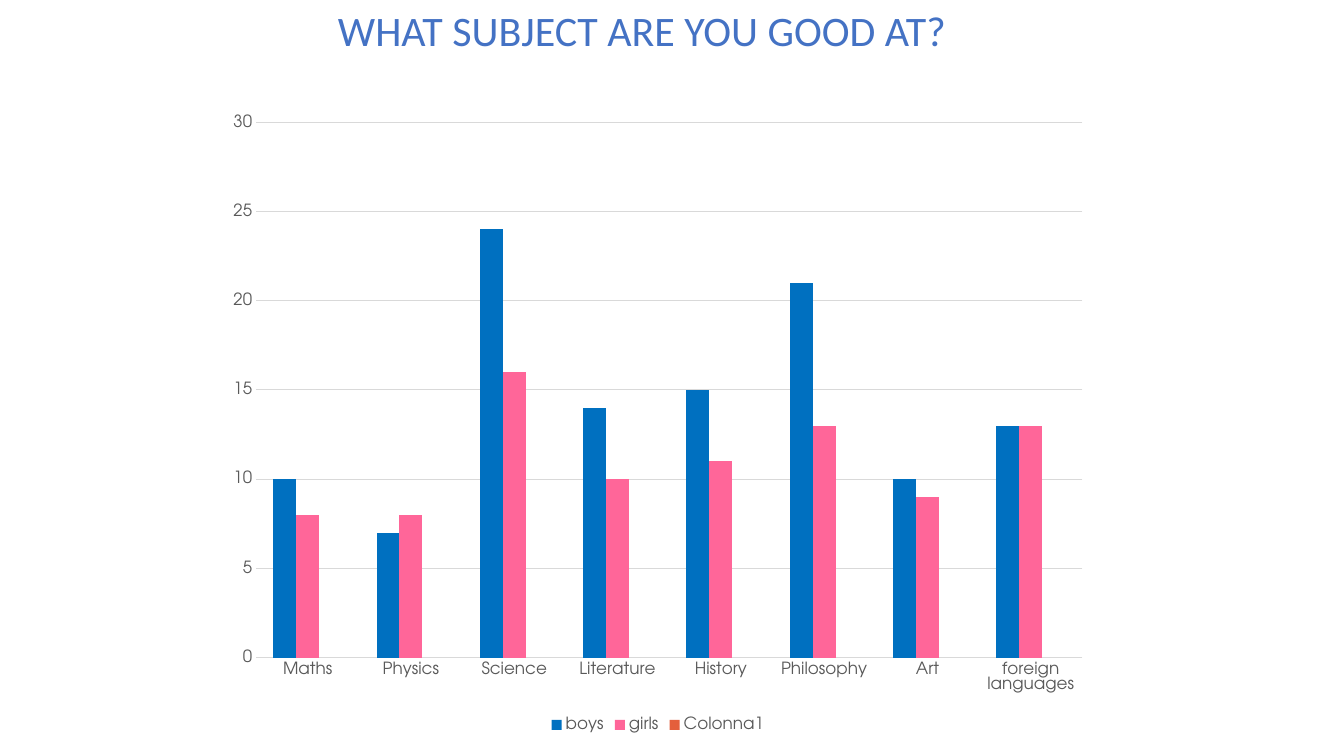
"""Build a slide with a column chart of the subjects boys and girls are good at."""
from dataclasses import dataclass
from typing import Any

from lxml.etree import SubElement
from pptx import Presentation
from pptx.chart.chart import Chart
from pptx.chart.data import CategoryChartData
from pptx.dml.color import RGBColor
from pptx.enum.chart import XL_CHART_TYPE, XL_LEGEND_POSITION, XL_TICK_MARK
from pptx.enum.text import MSO_AUTO_SIZE, PP_ALIGN
from pptx.oxml.ns import qn
from pptx.slide import Slide
from pptx.text.text import Font
from pptx.util import Inches, Pt

CHART_FONT = "TeX Gyre Adventor"
GREY = "595959"
SUBJECTS = ["Maths", "Physics", "Science", "Literature",
            "History", "Philosophy", "Art", "foreign languages"]


@dataclass(frozen=True)
class Series:
    name: str
    color: str
    values: list[int | None]


SERIES = [
    Series("boys", "0070C0", [10, 7, 24, 14, 15, 21, 10, 13]),
    Series("girls", "FF6699", [8, 8, 16, 10, 11, 13, 9, 13]),
    Series("Colonna1", "E45F3C", [None] * len(SUBJECTS)),
]
TITLE_STOPS = {0: "203864", 50: "4472C4", 100: "8FAADC"}


def rgb(value: str) -> RGBColor:
    return RGBColor.from_string(value)


def set_attrs(obj: Any, values: dict[str, Any]) -> None:
    for name, value in values.items():
        setattr(obj, name, value)


def set_font(font: Font, size: int, color: str) -> None:
    set_attrs(font, {"name": CHART_FONT, "size": Pt(size), "bold": False})
    font.color.rgb = rgb(color)


def add_title(s: Slide, text: str) -> None:
    sp = s.shapes.add_textbox(Inches(0.39), Inches(0), Inches(11.96), Inches(0.61))
    tf = sp.text_frame
    set_attrs(tf, {"word_wrap": True, "auto_size": MSO_AUTO_SIZE.SHAPE_TO_FIT_TEXT})
    p = tf.paragraphs[0]
    p.alignment = PP_ALIGN.CENTER
    r = p.add_run()
    r.text = text
    set_attrs(r.font, {"name": "Calibri", "size": Pt(30)})
    grad = SubElement(r.font._element, qn("a:gradFill"))
    r.font._element.insert(0, grad)
    stops = SubElement(grad, qn("a:gsLst"))
    for percent, color in TITLE_STOPS.items():
        gs = SubElement(stops, qn("a:gs"), pos=str(percent * 1000))
        SubElement(gs, qn("a:srgbClr"), val=color)
    SubElement(grad, qn("a:lin"), ang=str(90 * 60000), scaled="0")


def format_axes(chart: Chart) -> None:
    for axis in (chart.category_axis, chart.value_axis):
        set_attrs(axis, {"major_tick_mark": XL_TICK_MARK.NONE,
                         "minor_tick_mark": XL_TICK_MARK.NONE})
        axis.format.line.fill.background()
        set_font(axis.tick_labels.font, 12, GREY)
    set_attrs(chart.value_axis, {"minimum_scale": 0, "maximum_scale": 30,
                                 "major_unit": 5, "has_major_gridlines": True})
    line = chart.value_axis.major_gridlines.format.line
    line.width = Pt(0.75)
    line.color.rgb = rgb("D9D9D9")


def add_subject_chart(s: Slide) -> None:
    data = CategoryChartData()
    data.categories = SUBJECTS
    for series in SERIES:
        data.add_series(series.name, series.values)
    chart = s.shapes.add_chart(
        XL_CHART_TYPE.COLUMN_CLUSTERED,
        Inches(2.14), Inches(1.01), Inches(8.77), Inches(6.3), data,
    ).chart
    set_attrs(chart, {"has_title": False, "has_legend": True})
    set_font(chart.font, 10, "000000")
    format_axes(chart)
    set_attrs(chart.legend, {"position": XL_LEGEND_POSITION.BOTTOM,
                             "include_in_layout": False})
    set_font(chart.legend.font, 12, GREY)
    plot = chart.plots[0]
    set_attrs(plot, {"gap_width": 150, "overlap": 0, "vary_by_categories": False})
    for bars, series in zip(plot.series, SERIES):
        bars.invert_if_negative = False
        bars.format.fill.solid()
        bars.format.fill.fore_color.rgb = rgb(series.color)


def main() -> None:
    prs = Presentation()
    set_attrs(prs, {"slide_width": Inches(13.33), "slide_height": Inches(7.5)})
    s = prs.slides.add_slide(prs.slide_layouts[6])
    add_title(s, "WHAT SUBJECT ARE YOU GOOD AT?")
    add_subject_chart(s)
    prs.save("out.pptx")


if __name__ == "__main__":
    main()
